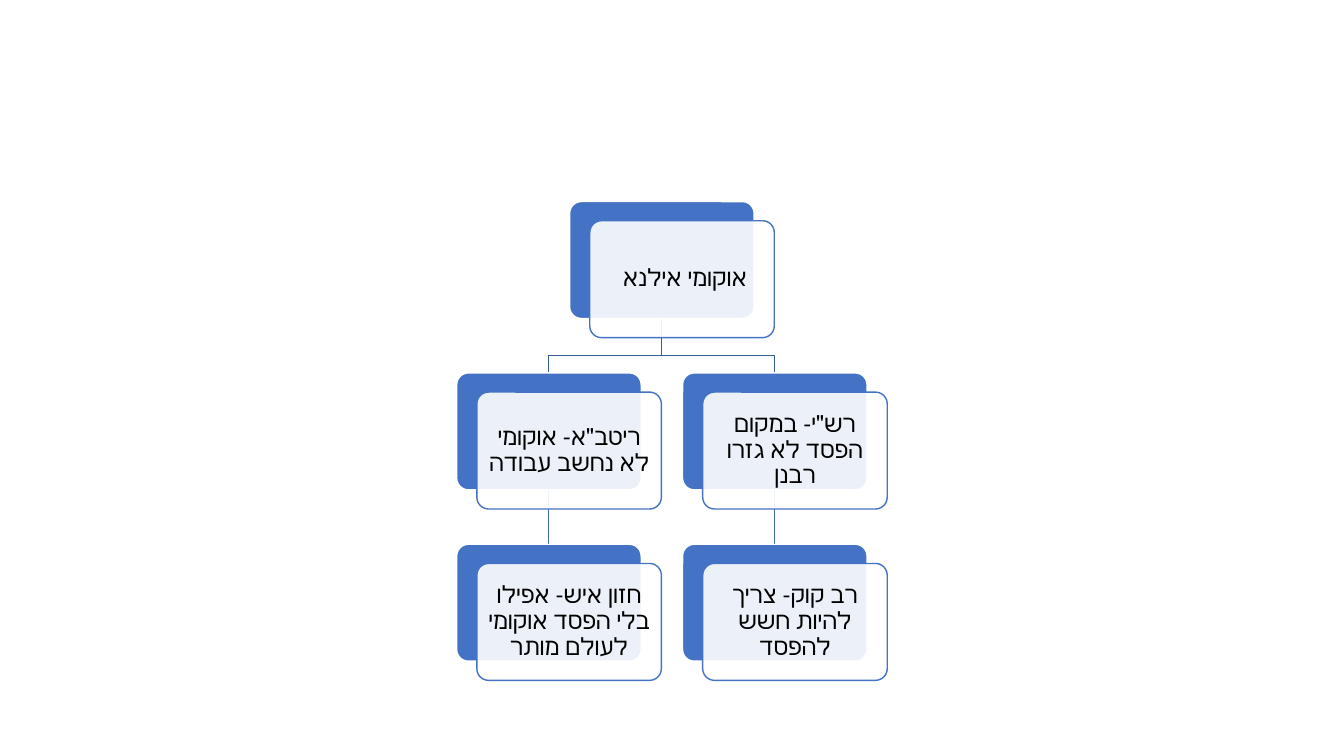
"""Build a slide with a three-level Hebrew hierarchy of layered cards."""
from dataclasses import dataclass

from lxml import etree
from pptx import Presentation
from pptx import util as u
from pptx.dml.color import RGBColor
from pptx.enum import shapes, text
from pptx.oxml import ns


@dataclass(frozen=True)
class Theme:
    """Colours, type and line weight of the slide."""
    accent: str = "4472C4"
    white: str = "FFFFFF"
    ink: str = "000000"
    upper_link: str = "365B9D"
    lower_link: str = "3E67B2"
    font: str = "Calibri"
    size: int = 17
    line: int = 1
    opacity: int = 90


THEME = Theme()
CARD_W, CARD_H = 1.83, 1.16
LEFT, TOP = 4.53, 2
COL_STEP, ROW_STEP = 2.24, 1.7
OFFSET_X, OFFSET_Y = 0.2, 0.19
LINK_X, BEND = 0.91, 0.37

CARDS = [
    (0.5, 0, "אוקומי אילנא "),
    (1, 1, 'רש"י- במקום הפסד לא גזרו רבנן'),
    (1, 2, "רב קוק- צריך להיות חשש להפסד"),
    (0, 1, 'ריטב"א- אוקומי לא נחשב עבודה'),
    (0, 2, "חזון איש- אפילו בלי הפסד אוקומי לעולם מותר"),
]
LINKS = [
    ((0, 1), (0, 2), THEME.lower_link),
    ((0.5, 0), (0, 1), THEME.upper_link),
    ((1, 1), (1, 2), THEME.lower_link),
    ((0.5, 0), (1, 1), THEME.upper_link),
]


def corner(col, row):
    """Return the top left corner of a card in inches."""
    return LEFT + col * COL_STEP, TOP + row * ROW_STEP


def set_line(line, color):
    """Give a line its colour and weight."""
    line.color.rgb = RGBColor.from_string(color)
    line.width = u.Pt(THEME.line)


def add_link(slide, parent, child, color):
    """Draw a straight or stepped link from a parent card to its child."""
    px, py = corner(*parent)
    cx, cy = corner(*child)
    px, cx, py = px + LINK_X, cx + LINK_X, py + CARD_H
    if px == cx:
        sp = slide.shapes.add_connector(
            shapes.MSO_CONNECTOR.STRAIGHT, *map(u.Inches, (px, py, cx, cy)))
        etree.SubElement(sp._element.spPr, ns.qn("a:effectLst"))
    else:
        points = [(px, py + BEND), (cx, py + BEND), (cx, cy)]
        builder = slide.shapes.build_freeform(u.Inches(px), u.Inches(py))
        builder.add_line_segments(
            [(u.Inches(x), u.Inches(y)) for x, y in points], close=False)
        sp = builder.convert_to_shape()
        sp.fill.background()
        sp.shadow.inherit = False
    set_line(sp.line, color)


def add_panel(slide, x, y, fill, line):
    """Add one rounded panel and return it."""
    sp = slide.shapes.add_shape(
        shapes.MSO_SHAPE.ROUNDED_RECTANGLE,
        *map(u.Inches, (x, y, CARD_W, CARD_H)))
    sp.adjustments[0] = 0.1
    sp.shadow.inherit = False
    sp.fill.solid()
    sp.fill.fore_color.rgb = RGBColor.from_string(fill)
    set_line(sp.line, line)
    return sp


def set_opacity(sp, percent):
    """Make the solid fill of a shape partly transparent."""
    color = sp._element.spPr.find(ns.qn("a:solidFill"))[0]
    etree.SubElement(color, ns.qn("a:alpha"), val=str(percent * 1000))


def write_rtl(sp, words):
    """Write a centred right-to-left paragraph in a shape."""
    tf = sp.text_frame
    frame_format = {"word_wrap": True,
                    "vertical_anchor": text.MSO_ANCHOR.MIDDLE}
    for side in ("left", "right", "top", "bottom"):
        frame_format[f"margin_{side}"] = u.Inches(0.07)
    p = tf.paragraphs[0]
    r = p.add_run()
    r.text = words
    formats = [
        (tf, frame_format),
        (p, {"alignment": text.PP_ALIGN.CENTER, "line_spacing": 0.9}),
        (r.font, {"name": THEME.font, "size": u.Pt(THEME.size)}),
    ]
    for target, values in formats:
        for name, value in values.items():
            setattr(target, name, value)
    r.font.color.rgb = RGBColor.from_string(THEME.ink)
    p._p.get_or_add_pPr().set("rtl", "1")
    r._r.get_or_add_rPr().set("lang", "he-IL")


def add_card(slide, col, row, words):
    """Add a solid back panel and a translucent front panel with text."""
    x, y = corner(col, row)
    add_panel(slide, x, y, THEME.accent, THEME.white)
    sp = add_panel(slide, x + OFFSET_X, y + OFFSET_Y,
                   THEME.white, THEME.accent)
    set_opacity(sp, THEME.opacity)
    write_rtl(sp, words)


def main():
    """Build and save the slide."""
    prs = Presentation()
    prs.slide_width, prs.slide_height = u.Inches(13.33), u.Inches(7.5)
    slide = prs.slides.add_slide(prs.slide_layouts[6])
    for link in LINKS:
        add_link(slide, *link)
    for card in CARDS:
        add_card(slide, *card)
    prs.save("out.pptx")


if __name__ == "__main__":
    main()
